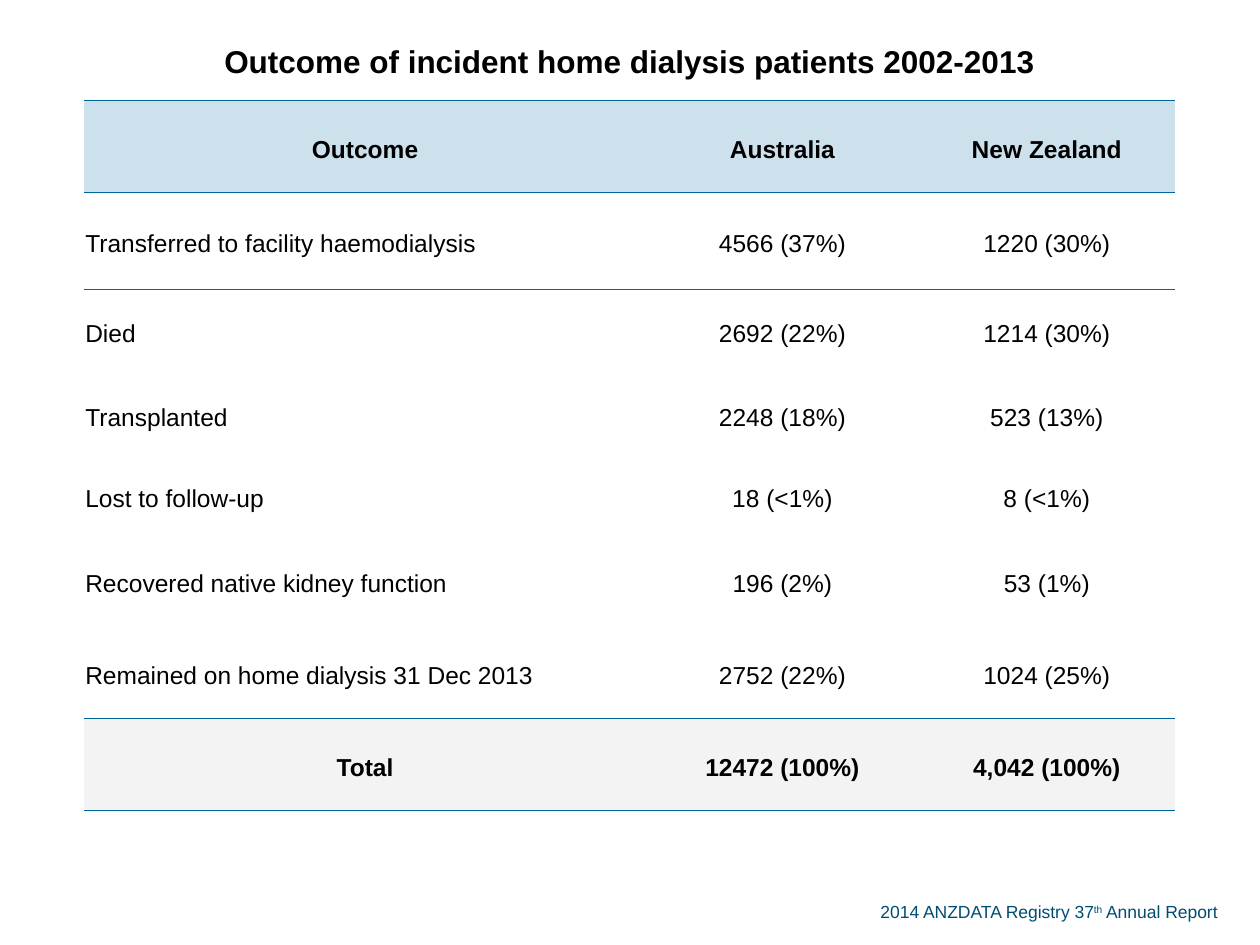
from lxml import etree
from pptx import Presentation
from pptx.dml.color import RGBColor
from pptx.enum.text import MSO_ANCHOR, MSO_AUTO_SIZE, PP_ALIGN
from pptx.oxml.ns import qn
from pptx.util import Pt

CENTER = PP_ALIGN.CENTER
LEFT = PP_ALIGN.LEFT
MIDDLE = MSO_ANCHOR.MIDDLE
GROW = MSO_AUTO_SIZE.SHAPE_TO_FIT_TEXT

COLORS = {
    "text": "000000",
    "rule": "006699",
    "header": "CCE1EB",
    "total": "F3F3F3",
    "footer": "004D73",
}
FONT = "Arial"
PLAIN_TABLE_STYLE = "{2D5ABB26-0587-4C30-8999-92F81FD0307C}"

TITLE = "Outcome of incident home dialysis patients 2002-2013"
ROWS = [
    (TITLE, "", ""),
    ("Outcome", "Australia", "New Zealand"),
    ("Transferred to facility haemodialysis", "4566 (37%)", "1220 (30%)"),
    ("Died", "2692 (22%)", "1214 (30%)"),
    ("Transplanted", "2248 (18%)", "523 (13%)"),
    ("Lost to follow-up", "18 (<1%)", "8 (<1%)"),
    ("Recovered native kidney function", "196 (2%)", "53 (1%)"),
    ("Remained on home dialysis 31 Dec 2013", "2752 (22%)", "1024 (25%)"),
    ("Total", "12472 (100%)", "4,042 (100%)"),
]
COLUMN_WIDTHS = [321.3, 155.7, 146.5]
ROW_HEIGHTS = [48.2, 52.4, 55.4, 47.8, 48, 44.8, 52.4, 52.4, 52.4]
HEADER_ROW = 1
TOTAL_ROW = len(ROWS) - 1
ROW_FILLS = {HEADER_ROW: "header", TOTAL_ROW: "total"}
BOLD_ROWS = {0, HEADER_ROW, TOTAL_ROW}
RULES_BELOW = {0, HEADER_ROW, TOTAL_ROW - 1, TOTAL_ROW}


def add_run(paragraph, text, size, color, bold=False):
    run = paragraph.add_run()
    run.text = text
    run.font.name = FONT
    run.font.size = Pt(size)
    run.font.bold = bold
    run.font.color.rgb = RGBColor.from_string(COLORS[color])
    return run


def add_border(cell, tag):
    line = etree.Element(qn(tag), w=str(Pt(0.5)))
    fill = etree.SubElement(line, qn("a:solidFill"))
    etree.SubElement(fill, qn("a:srgbClr"), val=COLORS["rule"])
    cell._tc.get_or_add_tcPr().insert(0, line)


def format_cell(cell, row):
    cell.vertical_anchor = MIDDLE
    cell.margin_left = cell.margin_right = cell.margin_top = Pt(0.75)
    cell.margin_bottom = 0
    if row in ROW_FILLS:
        cell.fill.solid()
        cell.fill.fore_color.rgb = RGBColor.from_string(COLORS[ROW_FILLS[row]])
    else:
        cell.fill.background()
    if row in RULES_BELOW:
        add_border(cell, "a:lnB")
    if row - 1 in RULES_BELOW:
        add_border(cell, "a:lnT")


def fill_cell(cell, text, row, column):
    paragraph = cell.text_frame.paragraphs[0]
    paragraph.alignment = CENTER if column or row in BOLD_ROWS else LEFT
    paragraph.line_spacing = 1.19
    paragraph.space_after = Pt(14)
    add_run(paragraph, text, 14 if row else 18, "text", row in BOLD_ROWS)


def add_outcome_table(slide):
    frame = slide.shapes.add_table(
        len(ROWS), len(COLUMN_WIDTHS), Pt(48), Pt(9.4),
        Pt(sum(COLUMN_WIDTHS)), Pt(sum(ROW_HEIGHTS)))
    table = frame.table
    table.first_row = table.horz_banding = False
    table._tbl.tblPr.find(qn("a:tableStyleId")).text = PLAIN_TABLE_STYLE
    for column, width in zip(table.columns, COLUMN_WIDTHS):
        column.width = Pt(width)
    for row, height in zip(table.rows, ROW_HEIGHTS):
        row.height = Pt(height)
    table.cell(0, 0).merge(table.cell(0, len(COLUMN_WIDTHS) - 1))
    for row, texts in enumerate(ROWS):
        for column, text in enumerate(texts):
            cell = table.cell(row, column)
            format_cell(cell, row)
            if text:
                fill_cell(cell, text, row, column)


def add_footer(slide):
    shape = slide.shapes.add_textbox(Pt(496), Pt(511.2), Pt(215.3), Pt(19.4))
    text_frame = shape.text_frame
    text_frame.word_wrap = True
    text_frame.auto_size = GROW
    paragraph = text_frame.paragraphs[0]
    add_run(paragraph, "2014 ANZDATA Registry 37", 10, "footer")
    ordinal = add_run(paragraph, "th", 10, "footer")
    ordinal.font._element.set("baseline", "30000")
    add_run(paragraph, " Annual Report", 10, "footer")


def main():
    presentation = Presentation()
    presentation.slide_width = Pt(720)
    presentation.slide_height = Pt(540)
    slide = presentation.slides.add_slide(presentation.slide_layouts[6])
    add_footer(slide)
    add_outcome_table(slide)
    presentation.save("out.pptx")


if __name__ == "__main__":
    main()
